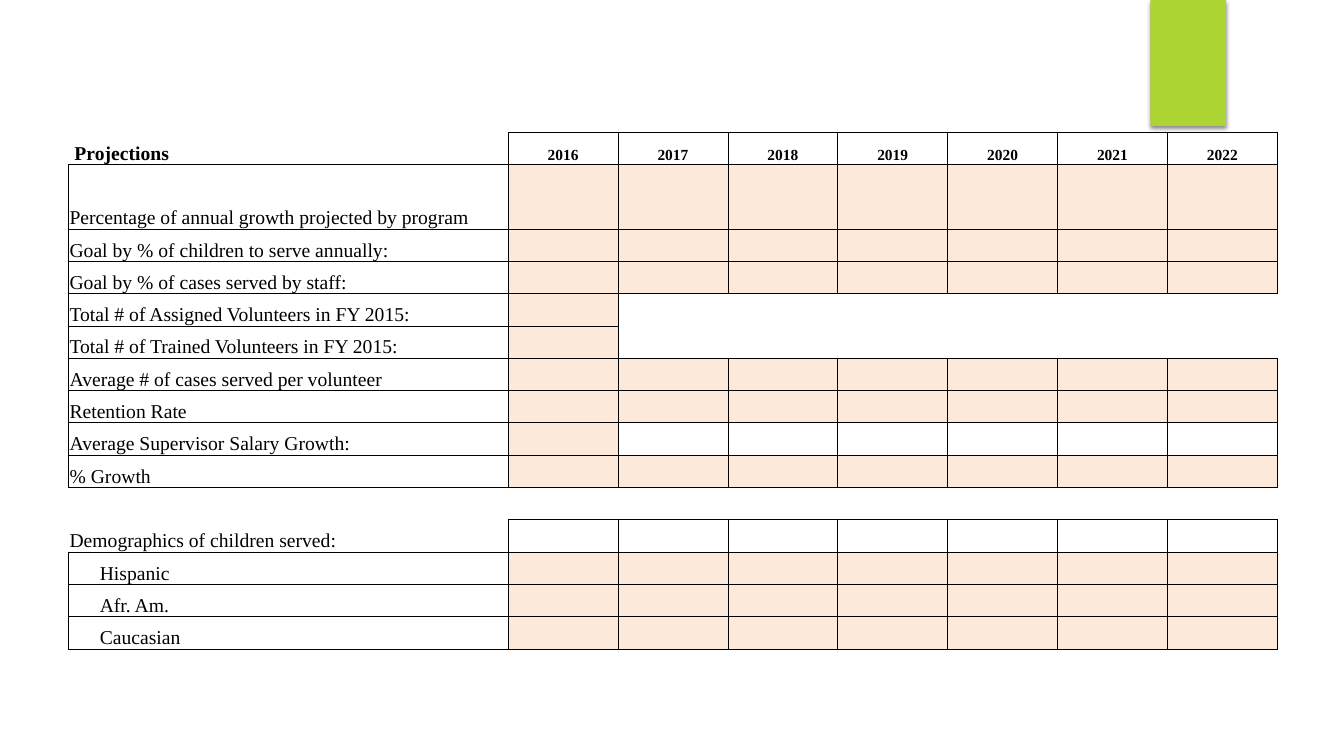
import dataclasses

import lxml.etree
import pptx
import pptx.dml.color
import pptx.enum.shapes
import pptx.enum.text
import pptx.oxml.ns
import pptx.util


@dataclasses.dataclass(frozen=True)
class Theme:
    font: str = "Times New Roman"
    ink: str = "000000"
    accent: str = "ACD433"
    white: str = "FFFFFF"
    peach: str = "FDE9D9"
    label_size: int = 14
    year_size: int = 11
    border: float = 0.5


OPEN, WHITE, PEACH = ".", "w", "p"
ALL_PEACH = WHITE + PEACH * 7
FIRST_YEAR_ONLY = WHITE + PEACH + OPEN * 6
YEARS = [str(year) for year in range(2016, 2023)]
ROWS = [
    (" Projections", OPEN + WHITE * 7),
    ("Percentage of annual growth projected by program", ALL_PEACH),
    ("Goal by % of children to serve annually:", ALL_PEACH),
    ("Goal by % of cases served by staff:", ALL_PEACH),
    ("Total # of Assigned Volunteers in FY 2015:", FIRST_YEAR_ONLY),
    ("Total # of Trained Volunteers in FY 2015:", FIRST_YEAR_ONLY),
    ("Average # of cases served per volunteer", ALL_PEACH),
    ("Retention Rate", ALL_PEACH),
    ("Average Supervisor Salary Growth:", WHITE + PEACH + WHITE * 6),
    ("% Growth", ALL_PEACH),
    ("", OPEN * 8),
    ("Demographics of children served:", OPEN + WHITE * 7),
    ("Hispanic", ALL_PEACH),
    ("Afr. Am.", ALL_PEACH),
    ("Caucasian", ALL_PEACH),
]
TALL_ROW = 1
GROUPS = ("Hispanic", "Afr. Am.", "Caucasian")
SIDES = {"lnL": (0, -1), "lnR": (0, 1), "lnT": (-1, 0), "lnB": (1, 0)}


class SlideBuilder:
    """Draws styled elements on one slide, with lengths in px."""

    SCALE = 9144

    def __init__(self, theme, width, height):
        self.theme = theme
        self.presentation = pptx.Presentation()
        self.presentation.slide_width = self.px(width)
        self.presentation.slide_height = self.px(height)
        self.slide = self.presentation.slides.add_slide(self.presentation.slide_layouts[6])

    def px(self, length):
        return pptx.util.Emu(round(length * self.SCALE))

    def color(self, value):
        return pptx.dml.color.RGBColor.from_string(value)

    def element(self, parent, tag, **attributes):
        return lxml.etree.SubElement(parent, pptx.oxml.ns.qn("a:" + tag), attributes)

    def accent_block(self, left, top, width, height):
        shape = self.slide.shapes.add_shape(
            pptx.enum.shapes.MSO_SHAPE.RECTANGLE, *map(self.px, (left, top, width, height)))
        shape.fill.solid()
        shape.fill.fore_color.rgb = self.color(self.theme.accent)
        shape.line.fill.background()
        shape.shadow.inherit = False
        effects = shape._element.spPr.find(pptx.oxml.ns.qn("a:effectLst"))
        shadow = self.element(effects, "outerShdw", blurRad=str(pptx.util.Pt(3)),
                              dist=str(pptx.util.Pt(2)), dir="5400000", rotWithShape="0")
        black = self.element(shadow, "srgbClr", val=self.theme.ink)
        self.element(black, "alpha", val="45000")

    def borders(self, cell, drawn_sides):
        properties = cell._tc.get_or_add_tcPr()
        for side in SIDES:
            line = self.element(properties, side, w=str(pptx.util.Pt(self.theme.border)))
            if side in drawn_sides:
                fill = self.element(line, "solidFill")
                self.element(fill, "srgbClr", val=self.theme.ink)
            else:
                self.element(line, "noFill")

    def cell(self, cell, text, kind, drawn_sides, size, bold, centered, indent):
        cell.margin_left = self.px(indent)
        cell.margin_right = cell.margin_top = self.px(1)
        cell.margin_bottom = 0
        cell.vertical_anchor = pptx.enum.text.MSO_ANCHOR.BOTTOM
        self.borders(cell, drawn_sides)
        cell.fill.solid()
        cell.fill.fore_color.rgb = self.color(
            self.theme.peach if kind == PEACH else self.theme.white)
        cell.text_frame.text = text
        paragraph = cell.text_frame.paragraphs[0]
        if not text:
            self.element(paragraph._p, "endParaRPr", sz=str(size * 100))
            return
        if centered:
            paragraph.alignment = pptx.enum.text.PP_ALIGN.CENTER
        font = paragraph.runs[0].font
        font.name = self.theme.font
        font.size = pptx.util.Pt(size)
        font.bold = bold
        font.color.rgb = self.color(self.theme.ink)

    def projections_table(self, left, top, height, label_width, year_width):
        kinds = [pattern for _, pattern in ROWS]
        boxed = {(row, column) for row, pattern in enumerate(kinds)
                 for column, kind in enumerate(pattern) if kind != OPEN}
        frame = self.slide.shapes.add_table(
            len(ROWS), len(YEARS) + 1, self.px(left), self.px(top),
            self.px(label_width + year_width * len(YEARS)), self.px(height))
        table = frame.table
        table.first_row = table.horz_banding = False
        for index, column in enumerate(table.columns):
            column.width = self.px(year_width if index else label_width)
        unit = height / (len(ROWS) + 1)
        for index, row in enumerate(table.rows):
            row.height = self.px(unit * 2 if index == TALL_ROW else unit)
        for row, (label, pattern) in enumerate(ROWS):
            texts = [label] + (YEARS if row == 0 else [""] * len(YEARS))
            for column, (text, kind) in enumerate(zip(texts, pattern)):
                drawn_sides = {
                    side for side, (down, right) in SIDES.items()
                    if {(row, column), (row + down, column + right)} & boxed}
                self.cell(
                    table.cell(row, column), text, kind, drawn_sides,
                    size=self.theme.year_size if column else self.theme.label_size,
                    bold=row == 0, centered=column > 0,
                    indent=31 if text in GROUPS else 1)


def main():
    builder = SlideBuilder(Theme(), 1333, 750)
    builder.accent_block(1141, 0, 75, 125)
    builder.projections_table(68, 131, 513, 436, 109)
    builder.presentation.save("out.pptx")


if __name__ == "__main__":
    main()
